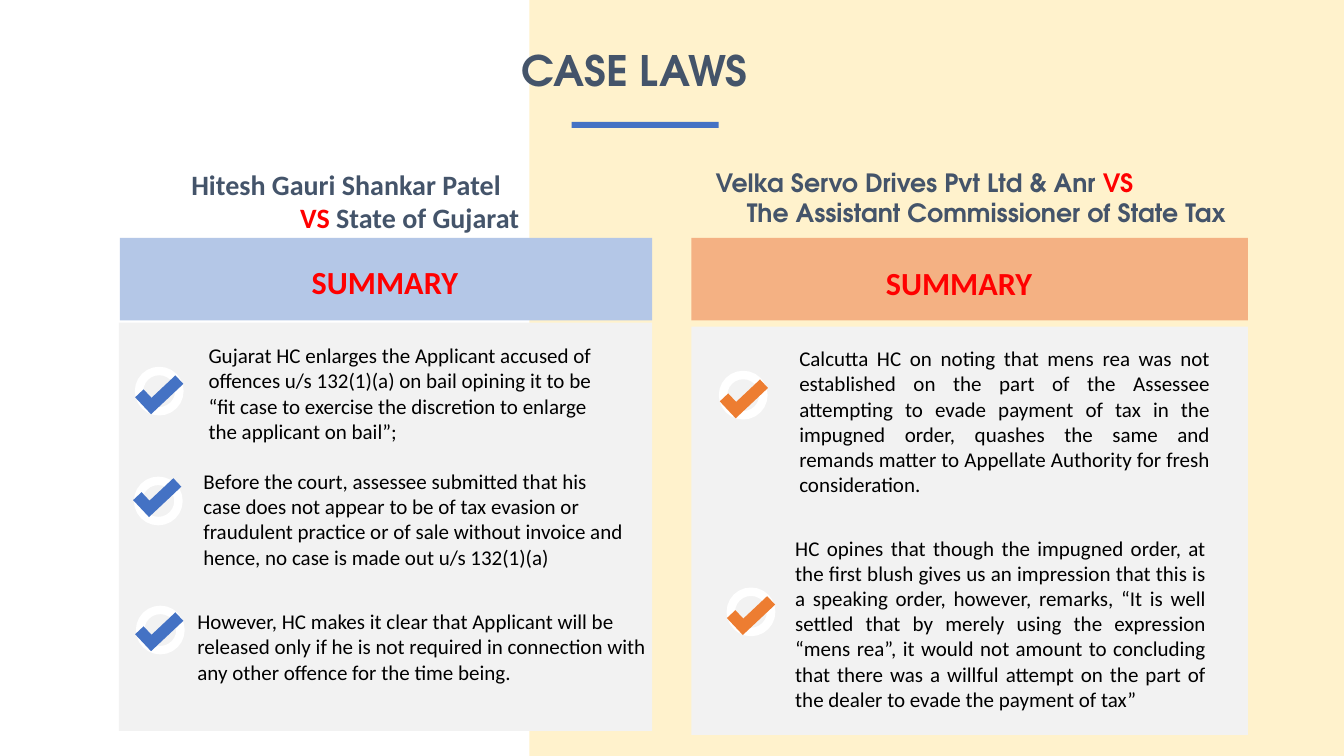
from dataclasses import dataclass

from pptx import Presentation
from pptx.dml.color import RGBColor
from pptx.enum.shapes import MSO_SHAPE as Shape
from pptx.enum.text import MSO_ANCHOR as Anchor, PP_ALIGN as Align
from pptx.util import Inches, Pt

SLIDE_W, SLIDE_H = Inches(13.33), Inches(7.5)


@dataclass(frozen=True)
class Theme:
    cream: str = "FFF2CC"
    panel: str = "F2F2F2"
    white: str = "FFFFFF"
    blue: str = "4472C4"
    light_blue: str = "B4C7E7"
    orange: str = "ED7D31"
    light_orange: str = "F4B183"
    slate: str = "44546A"
    red: str = "FF0000"
    black: str = "000000"
    body_font: str = "Calibri"
    display_font: str = "TeX Gyre Adventor"
    title_size: int = 30
    summary_size: int = 23
    body_size: int = 15
    ring_width: int = 6


THEME = Theme()

# Boxes are left, top, width, height in percent of the slide's size
BADGE_SIZE = (3, 5.33)
TICK_SIZE = (3.3, 3.07)
TICK_TURN = 316.8

# Each point: badge corner, tick corner, text box, wording
GUJARAT_CASE = dict(
    accent=THEME.blue, header_fill=THEME.light_blue, align=Align.LEFT,
    font=THEME.body_font, size=20, indent=8.1,
    panel=(8.85, 42.67, 39.68, 54), header=(8.93, 31.47, 39.6, 10.93),
    summary=(16.65, 34, 24, 6.53), heading=(13.5, 21.47, 31.13, 10.27),
    parties=[
        [("Hitesh Gauri Shankar Patel", THEME.slate)],
        [("VS ", THEME.red), ("State of Gujarat", THEME.slate)],
    ],
    points=[
        ((10.35, 49.07), (10.2, 50.13), (14.78, 44.67, 31.65, 14.8),
         "Gujarat HC enlarges the Applicant accused of offences u/s 132(1)(a) "
         "on bail opining it to be “fit case to exercise the discretion to "
         "enlarge the applicant on bail”;"),
        ((10.28, 63.6), (10.05, 63.73), (14.4, 61.33, 33.08, 14.8),
         "Before the court, assessee submitted that his case does not appear "
         "to be of tax evasion or fraudulent practice or of sale without "
         "invoice and hence, no case is made out u/s 132(1)(a)"),
        ((10.43, 80.67), (10.2, 81.47), (13.95, 79.87, 35.03, 11.47),
         "However, HC makes it clear that Applicant will be released only if "
         "he is not required in connection with any other offence for the "
         "time being."),
    ],
)

CALCUTTA_CASE = dict(
    accent=THEME.orange, header_fill=THEME.light_orange, align=Align.JUSTIFY,
    font=THEME.display_font, size=18, indent=2.33,
    panel=(51.45, 43.2, 41.4, 54), header=(51.45, 31.47, 41.4, 10.93),
    summary=(51.45, 34.13, 39.83, 6.53), heading=(52.5, 21.47, 39.83, 9.87),
    parties=[
        [("Velka Servo Drives Pvt Ltd & Anr ", THEME.slate), ("VS", THEME.red)],
        [("The Assistant Commissioner of State Tax", THEME.slate)],
    ],
    points=[
        ((53.8, 49.6), (53.7, 50.67), (58.73, 45.07, 32.03, 21.6),
         "Calcutta HC on noting that mens rea was not established on the part "
         "of the Assessee attempting to evade payment of tax in the impugned "
         "order, quashes the same and remands matter to Appellate Authority "
         "for fresh consideration."),
        ((54.38, 78.27), (54.23, 79.33), (58.43, 70.13, 32.03, 28.53),
         "HC opines that though the impugned order, at the first blush gives "
         "us an impression that this is a speaking order, however, remarks, "
         "“It is well settled that by merely using the expression “mens "
         "rea”, it would not amount to concluding that there was a willful "
         "attempt on the part of the dealer to evade the payment of tax”"),
    ],
)


def across(share):
    return round(SLIDE_W * share / 100)


def down(share):
    return round(SLIDE_H * share / 100)


def place(box):
    left, top, width, height = box
    return across(left), down(top), across(width), down(height)


def add_block(slide, box, fill, kind=Shape.RECTANGLE, ring=None, turn=0):
    block = slide.shapes.add_shape(kind, *place(box))
    block.shadow.inherit = False
    block.rotation = turn
    block.fill.solid()
    block.fill.fore_color.rgb = RGBColor.from_string(fill)
    if ring:
        block.line.color.rgb = RGBColor.from_string(ring)
        block.line.width = Pt(THEME.ring_width)
    else:
        block.line.fill.background()


def style_run(run, font, size, color, bold):
    run.font.name = font
    run.font.size = Pt(size)
    run.font.bold = bold
    run.font.color.rgb = RGBColor.from_string(color)


def add_frame(slide, box):
    frame = slide.shapes.add_textbox(*place(box)).text_frame
    frame.word_wrap = True
    return frame


def add_text(slide, box, wording, size, color, font=THEME.body_font,
             bold=False, align=Align.LEFT):
    frame = add_frame(slide, box)
    frame.text = wording
    paragraph = frame.paragraphs[0]
    paragraph.alignment = align
    style_run(paragraph.runs[0], font, size, color, bold)
    return frame


def add_parties(slide, case):
    frame = add_frame(slide, case["heading"])
    for row, pieces in enumerate(case["parties"]):
        line = frame.add_paragraph() if row else frame.paragraphs[0]
        # The second party is stepped in from the first
        line._p.get_or_add_pPr().set("marL", str(across(case["indent"] * row)))
        line.alignment = Align.LEFT
        for wording, color in pieces:
            run = line.add_run()
            run.text = wording
            style_run(run, case["font"], case["size"], color, True)


def add_point(slide, point, case):
    badge, tick, text_box, wording = point
    add_block(slide, badge + BADGE_SIZE, THEME.panel, Shape.OVAL, THEME.white)
    add_block(slide, tick + TICK_SIZE, case["accent"], Shape.CORNER,
              turn=TICK_TURN)
    add_text(slide, text_box, wording, THEME.body_size, THEME.black,
             align=case["align"])


def add_case(slide, case):
    add_block(slide, case["panel"], THEME.panel)
    add_block(slide, case["header"], case["header_fill"])
    add_text(slide, case["summary"], "SUMMARY", THEME.summary_size, THEME.red,
             bold=True, align=Align.CENTER)
    add_parties(slide, case)
    for point in case["points"]:
        add_point(slide, point, case)


def add_title(slide):
    title = add_text(slide, (27.38, 2.27, 39.68, 14.67), "CASE LAWS",
                     THEME.title_size, THEME.slate, THEME.display_font,
                     bold=True, align=Align.CENTER)
    title.vertical_anchor = Anchor.MIDDLE
    title.paragraphs[0].line_spacing = 0.9
    add_block(slide, (42.53, 16.13, 10.95, 0.8), THEME.blue)


def main():
    deck = Presentation()
    deck.slide_width, deck.slide_height = SLIDE_W, SLIDE_H
    slide = deck.slides.add_slide(deck.slide_layouts[6])

    # Cream backdrop on the right of the slide
    add_block(slide, (39.38, 0, 60.62, 100), THEME.cream)
    add_title(slide)

    # One column per case
    for case in (GUJARAT_CASE, CALCUTTA_CASE):
        add_case(slide, case)

    deck.save("out.pptx")


if __name__ == "__main__":
    main()
